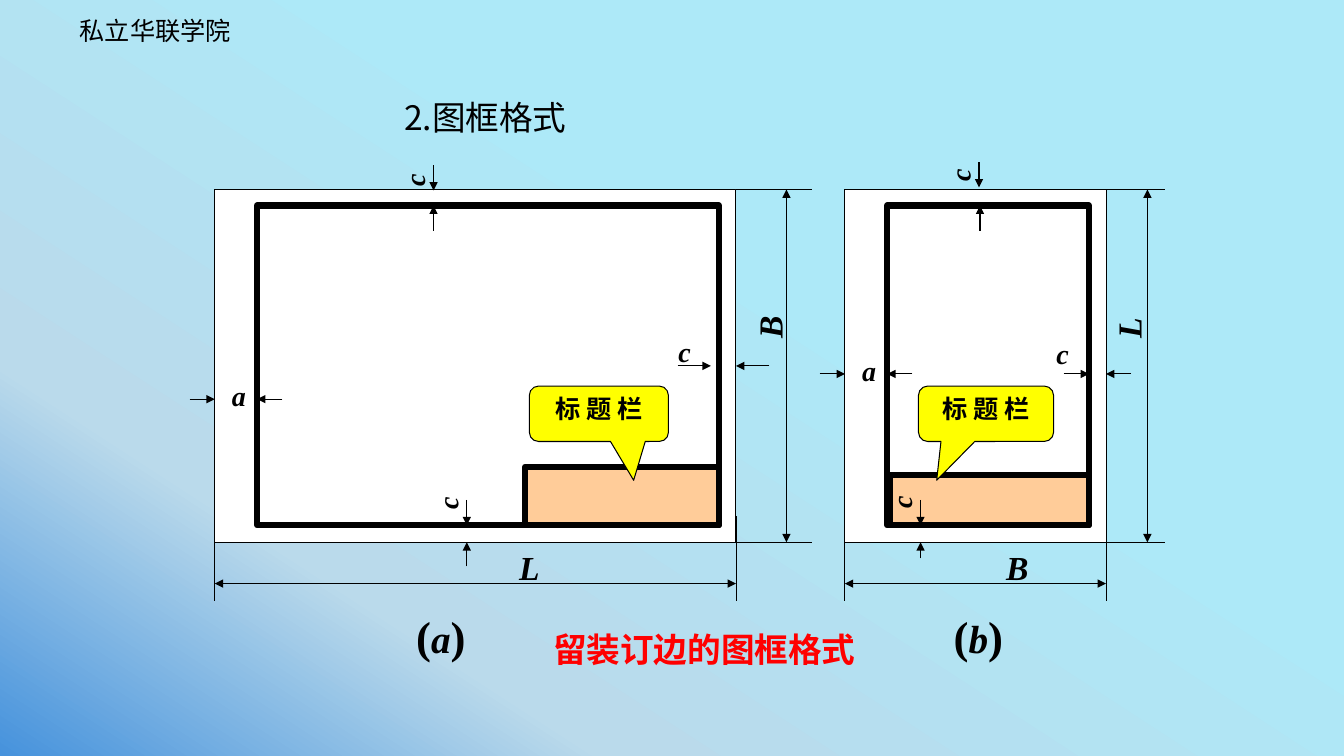
from lxml import etree
from pptx import Presentation
from pptx.dml.color import RGBColor
from pptx.enum.shapes import MSO_CONNECTOR, MSO_SHAPE
from pptx.enum.text import MSO_ANCHOR, MSO_AUTO_SIZE, PP_ALIGN
from pptx.oxml.ns import qn
from pptx.util import Inches, Pt

STRAIGHT = MSO_CONNECTOR.STRAIGHT
RECT = MSO_SHAPE.RECTANGLE
CALLOUT = MSO_SHAPE.ROUNDED_RECTANGULAR_CALLOUT
TOP = MSO_ANCHOR.TOP
GROW = MSO_AUTO_SIZE.SHAPE_TO_FIT_TEXT
LEFT, CENTER = PP_ALIGN.LEFT, PP_ALIGN.CENTER

COLORS = {"ink": "000000", "paper": "FFFFFF", "title_block": "FFCC99",
          "callout": "FFFF00", "red": "FF0000"}
BACKGROUND = [(0, "4692DC"), (24, "BADAEB"), (62, "ADE9F8")]
CJK, SERIF = "Noto Sans CJK SC", "Times New Roman"
THIN, THICK = 0.75, 4.5

# All places below are offsets in inches from the sheet's top left corner.
# arrows: axis, fixed coordinate, start, end
# labels: text, left, top, width, height, size, rotation, extra indent
SHEET_A = {
    "box": (2.13, 1.88, 5.17, 3.5),
    "title_block": (1.92, 0.58),
    "binding_line": True,
    "overlap": (0.25, 0.26), "reach": 0.75, "side_dim": 0.5,
    "arrows": [("v", 2.17, -0.24, 0.01), ("v", 2.17, 0.41, 0.16),
               ("v", 2.5, 3.08, 3.33), ("v", 2.5, 3.74, 3.5),
               ("h", 1.75, 4.59, 4.92), ("h", 1.75, 5.5, 5.17),
               ("h", 2.08, -0.25, 0), ("h", 2.08, 0.67, 0.42)],
    "labels": [("c", 1.64, -0.34, 0.67, 0.43, 20, 270, 0.14),
               ("c", 1.97, 2.86, 0.67, 0.43, 20, 270, 0.14),
               ("c", 4.5, 1.39, 0.67, 0.43, 20, 0, 0),
               ("a", 0, 1.83, 0.67, 0.43, 20, 0, 0.07),
               ("L", 2.92, 3.5, 0.67, 0.5, 24, 0, 0),
               ("B", 5.21, 1.04, 0.58, 0.5, 24, 270, 0)],
    "callout": (3.12, 1.38, 0.25),
    "caption": ("a", 1.9),
}
SHEET_B = {
    "box": (8.38, 1.88, 2.59, 3.5),
    "title_block": (1.97, 0.5),
    "binding_line": False,
    "overlap": (0.17, 0.09), "reach": 0.58, "side_dim": 0.41,
    "arrows": [("v", 1.33, -0.27, -0.02), ("v", 1.34, 0.41, 0.16),
               ("v", 0.75, 3.08, 3.33), ("v", 0.75, 3.66, 3.5),
               ("h", 1.83, 2.17, 2.42), ("h", 1.83, 2.84, 2.59),
               ("h", 1.83, -0.25, 0), ("h", 1.83, 0.67, 0.42)],
    "labels": [("c", 0.8, -0.39, 0.67, 0.43, 20, 270, 0.14),
               ("c", 0.22, 2.78, 0.67, 0.43, 20, 270, 0.07),
               ("c", 2, 1.41, 0.67, 0.43, 20, 0, 0),
               ("a", 0, 1.58, 0.67, 0.43, 20, 0, 0.07),
               ("B", 1.5, 3.5, 1.08, 0.5, 24, 0, 0),
               ("L", 2.65, 1.16, 0.33, 0.51, 24, 270, 0)],
    "callout": (0.73, 1.34, -0.365),
    "caption": ("b", 0.98),
}


def rgb(name):
    return RGBColor.from_string(COLORS[name])


def add_run(p, text, size, font, color="ink", bold=False, italic=False):
    r = p.add_run()
    r.text = text
    r.font.size, r.font.name = Pt(size), font
    r.font.bold, r.font.italic = bold, italic
    r.font.color.rgb = rgb(color)
    ea = etree.SubElement(r.font._element, qn("a:ea"))
    ea.set("typeface", CJK if font == "Arial" else font)


def add_text(slide, box, runs, align=LEFT, wrap=True, inset=0.1, rotation=0):
    sp = slide.shapes.add_textbox(*map(Inches, box))
    sp.rotation = rotation
    tf = sp.text_frame
    tf.word_wrap, tf.auto_size = wrap, GROW
    tf.margin_left = Inches(inset)
    p = tf.paragraphs[0]
    p.alignment = align
    for run in runs:
        add_run(p, *run)


def add_box(slide, kind, box, fill, width):
    sp = slide.shapes.add_shape(kind, *map(Inches, box))
    sp.shadow.inherit = False
    sp.fill.solid()
    sp.fill.fore_color.rgb = rgb(fill)
    sp.line.color.rgb = rgb("ink")
    sp.line.width = Pt(width)
    return sp


def add_line(slide, start, end, width=THIN, ends=()):
    line = slide.shapes.add_connector(STRAIGHT, *map(Inches, (*start, *end)))
    line.line.color.rgb = rgb("ink")
    line.line.width = Pt(width)
    for tag in ends:
        etree.SubElement(line.line._get_or_add_ln(), qn(tag)).set("type", "triangle")
    etree.SubElement(line._element.spPr, qn("a:effectLst"))
    return line


def draw_background(slide):
    fill = slide.background.fill
    fill.gradient()
    fill.gradient_angle = 57
    stops = slide._element.find(".//" + qn("a:gsLst"))
    for gs in list(stops):
        stops.remove(gs)
    for percent, color in BACKGROUND:
        gs = etree.SubElement(stops, qn("a:gs"), pos=str(percent * 1000))
        etree.SubElement(gs, qn("a:srgbClr"), val=color)


def draw_headings(slide):
    add_text(slide, (0.74, 0.1, 2.94, 0.4),
             [("私立华联学院", 18, "Noto Sans CJK JP")], inset=0.05)
    add_text(slide, (3.91, 0.91, 5.36, 0.5), [("2.图框格式", 24, CJK)])
    add_text(slide, (5.33, 6.19, 3.31, 0.5),
             [("留装订边的图框格式", 24, "Arial", "red", True)], CENTER)


def draw_sheet(slide, sheet):
    x, y, w, h = sheet["box"]
    right, bottom = x + w, y + h
    both = ("a:headEnd", "a:tailEnd")

    # Extension lines at the side, then paper, frame and title block
    overlap_x, overlap_y = sheet["overlap"]
    for level in (y, bottom):
        add_line(slide, (right - overlap_x, level), (right + sheet["reach"], level))
    paper = add_box(slide, RECT, (x, y, w, h), "paper", THIN)
    frame_x, frame_y = x + 0.42, y + 0.16
    frame_w, frame_h = w - 0.59, h - 0.33
    add_box(slide, RECT, (frame_x, frame_y, frame_w, frame_h), "paper", THICK)
    block_w, block_h = sheet["title_block"]
    add_box(slide, RECT, (frame_x + frame_w - block_w, frame_y + frame_h - block_h,
                          block_w, block_h), "title_block", THICK)
    if sheet["binding_line"]:
        add_line(slide, (frame_x, y + 0.24), (frame_x, bottom - 0.26), THICK)

    # Overall dimensions
    for edge in (x, right):
        add_line(slide, (edge, bottom - overlap_y), (edge, bottom + 0.58))
    add_line(slide, (x, bottom + 0.41), (right, bottom + 0.41), ends=both)
    side = right + sheet["side_dim"]
    add_line(slide, (side, y), (side, bottom), ends=both)

    # Margin arrows
    for axis, at, start, end in sheet["arrows"]:
        points = [(pos, at) if axis == "h" else (at, pos) for pos in (start, end)]
        arrow = add_line(slide, *[(x + dx, y + dy) for dx, dy in points],
                         ends=("a:tailEnd",))
        if points[1] == (w, h / 2):
            arrow.end_connect(paper, 3)

    # Letters
    for text, dx, dy, lw, lh, size, rotation, indent in sheet["labels"]:
        add_text(slide, (x + dx, y + dy, lw, lh),
                 [(text, size, SERIF, "ink", True, True)],
                 inset=0.1 + indent, rotation=rotation)

    # Callout on the title block
    dx, callout_w, tip_x = sheet["callout"]
    sp = add_box(slide, CALLOUT, (x + dx, y + 1.95, callout_w, 0.55), "callout", THIN)
    for i, value in enumerate((tip_x, 1.2, 0.167)):
        sp.adjustments[i] = value
    tf = sp.text_frame
    tf.vertical_anchor = TOP
    p = tf.paragraphs[0]
    p.alignment = CENTER
    add_run(p, "标 题 栏", 18, CJK, bold=True)

    # Caption
    letter, dx = sheet["caption"]
    add_text(slide, (x + dx, y + 4.11, 0.69, 0.63),
             [("(", 32, SERIF, "ink", True), (letter, 28, SERIF, "ink", True, True),
              (")", 32, SERIF, "ink", True)], wrap=False)


def main():
    prs = Presentation()
    prs.slide_width, prs.slide_height = Inches(13.33), Inches(7.5)
    slide = prs.slides.add_slide(prs.slide_layouts[6])
    draw_background(slide)
    draw_headings(slide)
    for sheet in (SHEET_A, SHEET_B):
        draw_sheet(slide, sheet)
    prs.save("out.pptx")


if __name__ == "__main__":
    main()
